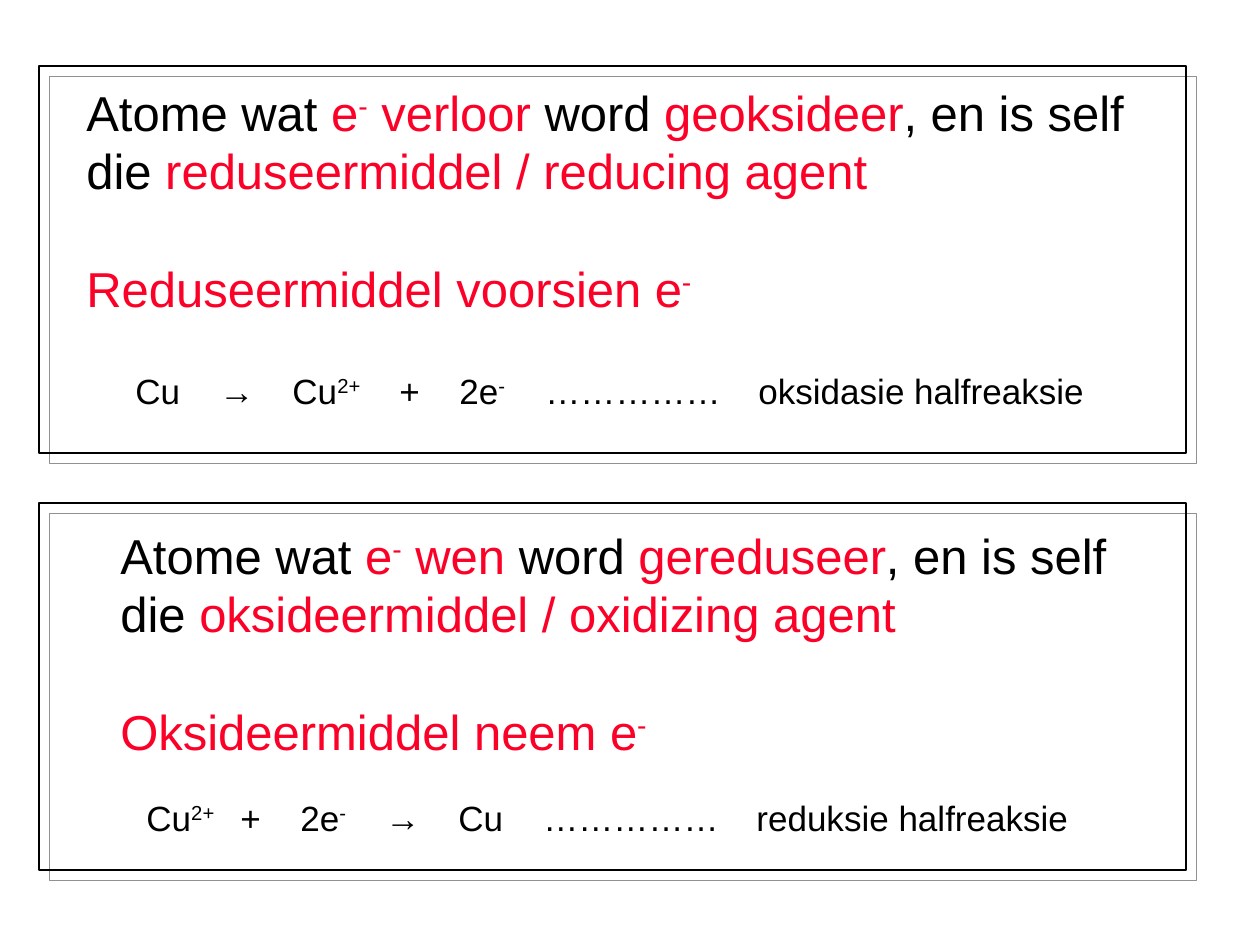
from dataclasses import dataclass
from typing import NamedTuple

from lxml import etree
from pptx import Presentation, util as u
from pptx.dml import color as c
from pptx.enum import shapes, text as t
from pptx.oxml import ns

SCALE = 914400 / 126  # EMU per px


def px(n: int) -> u.Emu:
    return u.Emu(round(n * SCALE))


@dataclass(frozen=True)
class Theme:
    font: str = "Arial"
    ink: str = "000000"
    red: str = "FC0128"
    shade: str = "919191"
    big: int = 28
    small: int = 20
    lead: float = 1.2
    rise: int = 30000


class Box(NamedTuple):
    left: int
    top: int
    width: int
    height: int


class Run(NamedTuple):
    words: str
    red: bool = False
    sup: bool = False


class Panel(NamedTuple):
    frame: Box
    rule: Box
    lines: list[list[Run]]
    sum: Box
    terms: list[Run]
    stops: list[int]


THEME = Theme()
MINUS = Run("-", sup=True)


def claim(act: str, state: str, agent: str, note: str) -> list[list[Run]]:
    """The rule about gaining or losing electrons, then its short form."""
    minus = Run("-", True, True)
    return [
        [Run("Atome wat "), Run("e", True), minus, Run(f" {act}", True),
         Run(" word "), Run(state, True), Run(", en is self die "),
         Run(agent, True)],
        [Run(f"{note} e", True), minus],
    ]


PANELS = [
    Panel(
        Box(39, 66, 1147, 387),
        Box(74, 76, 1132, 248),
        claim("verloor", "geoksideer", "reduseermiddel / reducing agent",
              "Reduseermiddel voorsien"),
        Box(123, 363, 1091, 54),
        [Run("Cu\t→\tCu"), Run("2+", sup=True), Run("\t+\t2e"), MINUS,
         Run("\t……………\toksidasie halfreaksie")],
        [84, 157, 264, 324, 410, 623],
    ),
    Panel(
        Box(39, 503, 1147, 367),
        Box(108, 519, 1064, 248),
        claim("wen", "gereduseer", "oksideermiddel / oxidizing agent",
              "Oksideermiddel neem"),
        Box(134, 790, 1002, 54),
        [Run("Cu"), Run("2+", sup=True), Run("\t+\t2e"), MINUS,
         Run("\t→\tCu\t……………\treduksie halfreaksie")],
        [94, 154, 239, 312, 397, 610],
    ),
]


def write(slide, box: Box, lines: list[list[Run]], *, size: int,
          stops: tuple | list = ()) -> None:
    frame = slide.shapes.add_textbox(*map(px, box)).text_frame
    frame.word_wrap = True
    frame.auto_size = t.MSO_AUTO_SIZE.NONE
    lead = u.Pt(size * THEME.lead)
    for i, runs in enumerate(lines):
        para = frame.add_paragraph() if i else frame.paragraphs[0]
        para.alignment = t.PP_ALIGN.LEFT
        para.line_spacing = lead
        para.space_before = lead if i else u.Pt(0)
        if stops:
            tabs = etree.SubElement(para._p.get_or_add_pPr(),
                                    ns.qn("a:tabLst"))
            for stop in stops:
                etree.SubElement(tabs, ns.qn("a:tab"),
                                 pos=str(px(stop)), algn="l")
        for part in runs:
            run = para.add_run()
            run.text = part.words
            font = run.font
            font.name, font.size = THEME.font, u.Pt(size)
            font.color.rgb = c.RGBColor.from_string(
                THEME.red if part.red else THEME.ink)
            if part.sup:
                run._r.get_or_add_rPr().set("baseline", str(THEME.rise))


def outline(slide, box: Box) -> None:
    """An open frame with a hard shadow down and to the right."""
    rect = slide.shapes.add_shape(shapes.MSO_SHAPE.RECTANGLE, *map(px, box))
    rect.fill.background()
    rect.line.color.rgb = c.RGBColor.from_string(THEME.ink)
    rect.line.width = u.Pt(1)
    rect.shadow.inherit = False
    glow = rect._element.spPr.find(ns.qn("a:effectLst"))
    cast = etree.SubElement(glow, ns.qn("a:outerShdw"), blurRad="0",
                            dist=str(u.Pt(8.5)), dir=str(45 * 60000),
                            algn="ctr", rotWithShape="0")
    etree.SubElement(cast, ns.qn("a:srgbClr"), val=THEME.shade)


def main() -> None:
    deck = Presentation()
    deck.slide_width, deck.slide_height = px(1260), px(945)
    slide = deck.slides.add_slide(deck.slide_layouts[6])
    # Rules and half reactions
    for panel in PANELS:
        write(slide, panel.rule, panel.lines, size=THEME.big)
        write(slide, panel.sum, [panel.terms], size=THEME.small,
              stops=panel.stops)
    # Frames lie in front
    for panel in PANELS:
        outline(slide, panel.frame)
    deck.save("out.pptx")


if __name__ == "__main__":
    main()
